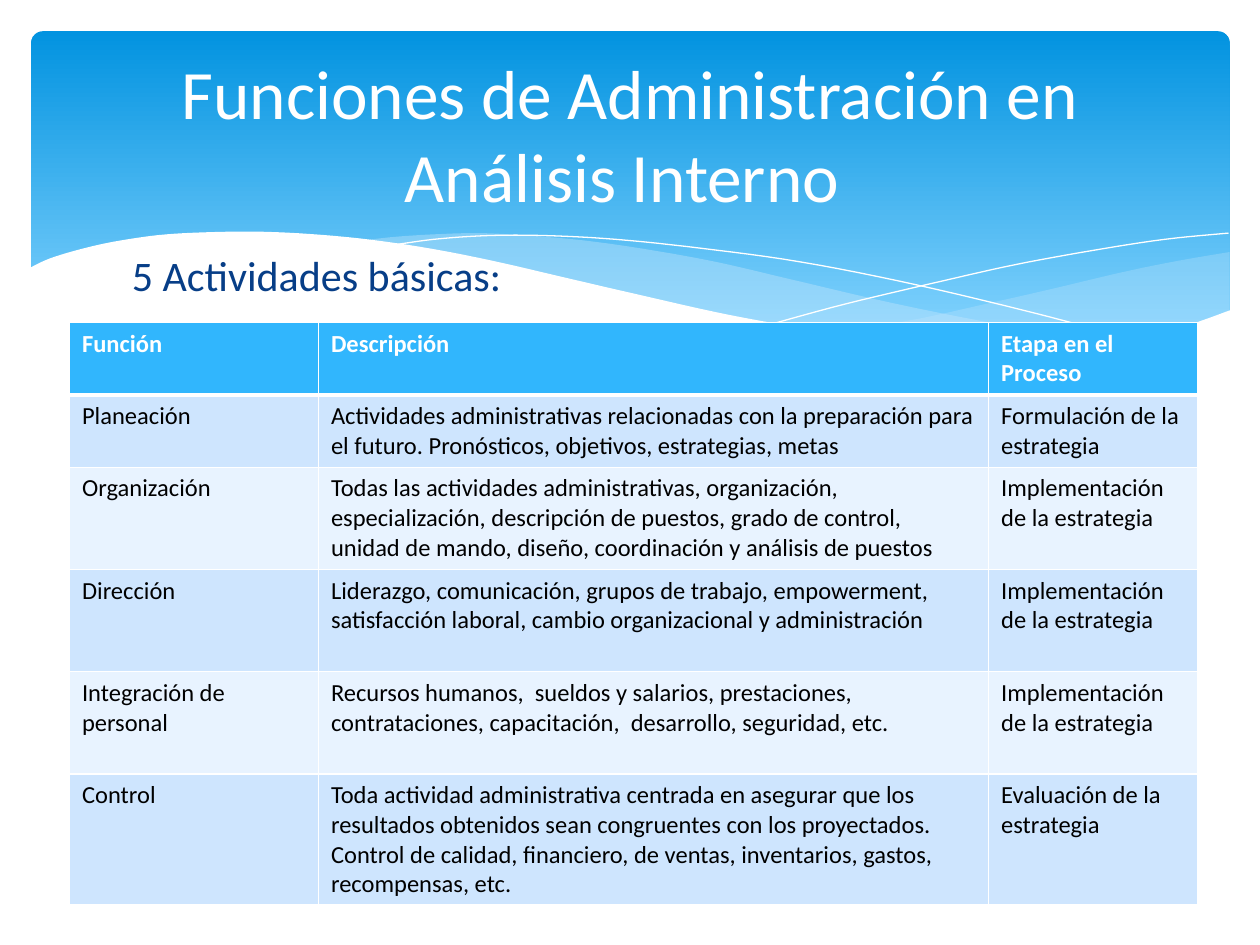
from lxml import etree
from pptx import Presentation
from pptx import util as u
from pptx.dml.color import RGBColor
from pptx.enum import shapes, text
from pptx.oxml.ns import qn

WHITE = RGBColor(0xFF, 0xFF, 0xFF)
BLACK = RGBColor(0x00, 0x00, 0x00)
NAVY = RGBColor(0x07, 0x3E, 0x87)
SKY_TOP = RGBColor(0x02, 0x93, 0xE0)
SKY_LOW = RGBColor(0x83, 0xD3, 0xFE)
MIST = RGBColor(0xC6, 0xE7, 0xFC)
HEADER = RGBColor(0x31, 0xB6, 0xFD)
BANDS = [RGBColor(0xCE, 0xE5, 0xFE), RGBColor(0xE8, 0xF3, 0xFF)]
STEPS = 6


def smooth(pts):
    ext = [pts[0]] + pts + [pts[-1]]
    out = [pts[0]]
    for a, b, c, d in zip(ext, ext[1:], ext[2:], ext[3:]):
        for i in range(1, STEPS + 1):
            t = i / STEPS
            out.append(tuple(
                b[k] + (c[k] - a[k]) * t / 2
                + (2 * a[k] - 5 * b[k] + 4 * c[k] - d[k]) * t ** 2 / 2
                + (3 * b[k] - a[k] - 3 * c[k] + d[k]) * t ** 3 / 2
                for k in (0, 1)))
    return out


def write(tf, words, color, fmt, align=text.PP_ALIGN.LEFT):
    tf.word_wrap = True
    p = tf.paragraphs[0]
    p.alignment = align
    r = p.add_run()
    r.text = words
    r.font.color.rgb = color
    for name, value in {"name": "Calibri", **fmt}.items():
        setattr(r.font, name, value)


prs = Presentation()
prs.slide_width, prs.slide_height = u.Cm(25.4), u.Cm(19.05)
s = prs.slides.add_slide(prs.slide_layouts[6])

sp = s.shapes.add_shape(shapes.MSO_SHAPE.ROUNDED_RECTANGLE,
                        u.Cm(0.63), u.Cm(0.63), u.Cm(24.16), u.Cm(6.86))
sp.adjustments[0] = 0.034
sp.shadow.inherit = False
sp.line.fill.background()
sp.fill.gradient()
sp.fill.gradient_angle = 270
for stop, pos, color in zip(sp.fill.gradient_stops, (0, 0.9), (SKY_TOP, SKY_LOW)):
    stop.position = pos
    stop.color.rgb = color

waves = [
    ([[(9.76, 2), (9.35, 2.07), (8.91, 2.16), (8.32, 2.3), (7.79, 2.42),
       (7.29, 2.53), (6.61, 2.65)],
      [(6.61, 2.65), (7.05, 2.71), (7.57, 2.76), (8.03, 2.78), (8.54, 2.76),
       (8.97, 2.7), (9.35, 2.62), (9.76, 2.47)]], MIST, 29),
    ([[(8.93, 2.73), (8.37, 2.65), (7.75, 2.54), (7.06, 2.4), (6.29, 2.22),
       (5.69, 2.08), (5.14, 1.98), (4.65, 1.91), (4.2, 1.87), (3.8, 1.85),
       (3.44, 1.86), (3.13, 1.88), (2.86, 1.91)],
      [(2.86, 1.91), (3.42, 1.99), (4.04, 2.11), (4.49, 2.22), (5.3, 2.4),
       (6.01, 2.55), (6.65, 2.66), (7.22, 2.74), (7.73, 2.77), (8.18, 2.78),
       (8.57, 2.77), (8.93, 2.73)]], MIST, 40),
    ([[(3.09, 1.95), (3.44, 1.9), (3.87, 1.87), (4.33, 1.87), (4.89, 1.9),
       (5.56, 1.97), (6.36, 2.08), (7.27, 2.26), (8.31, 2.51), (9.07, 2.72)]],
     None, None),
    ([[(6.13, 2.57), (6.72, 2.41), (7.48, 2.23), (8.06, 2.1), (8.66, 1.99),
       (9.24, 1.9), (9.75, 1.85)]], None, None),
    ([[(9.77, 2.46), (9.4, 2.59), (8.99, 2.69), (8.5, 2.75), (8.09, 2.77),
       (7.61, 2.75), (7.08, 2.7), (6.48, 2.62), (5.79, 2.5), (5.03, 2.33),
       (4.47, 2.2), (3.91, 2.07), (3.4, 1.97), (2.92, 1.9), (2.5, 1.86),
       (2.11, 1.84), (1.77, 1.84), (1.32, 1.86), (0.95, 1.91), (0.67, 1.97),
       (0.4, 2.05), (0.23, 2.13)],
      [(0.23, 3.29), (9.77, 3.29)]], WHITE, 100),
]
for curves, color, alpha in waves:
    pts = [(u.Cm(x * 2.54), u.Cm(y * 2.54))
           for curve in curves for x, y in smooth(curve)]
    fb = s.shapes.build_freeform(*pts[0])
    fb.add_line_segments(pts[1:], close=color is not None)
    sp = fb.convert_to_shape()
    sp.shadow.inherit = False
    if color is None:
        sp.fill.background()
        sp.line.color.rgb = WHITE
        sp.line.width = 0
        continue
    sp.line.fill.background()
    sp.fill.solid()
    sp.fill.fore_color.rgb = color
    if alpha < 100:
        clr = sp.element.spPr.find(qn("a:solidFill"))[0]
        etree.SubElement(clr, qn("a:alpha"), val=str(alpha * 1000))

sp = s.shapes.add_textbox(u.Cm(2.41), u.Cm(4.9), u.Cm(20.57), u.Cm(1.4))
write(sp.text_frame, "5 Actividades básicas:", NAVY, {"size": u.Pt(24)})

sp = s.shapes.add_textbox(u.Cm(1.27), u.Cm(0.94), u.Cm(22.86), u.Cm(3.48))
sp.text_frame.vertical_anchor = text.MSO_ANCHOR.MIDDLE
write(sp.text_frame, "Funciones de Administración en Análisis Interno ", WHITE,
      {"size": u.Pt(39.6)}, text.PP_ALIGN.CENTER)

rows = [
    ("Función", "Descripción", "Etapa en el Proceso"),
    ("Planeación",
     "Actividades administrativas relacionadas con la preparación para el futuro. "
     "Pronósticos, objetivos, estrategias, metas",
     "Formulación de la estrategia"),
    ("Organización",
     "Todas las actividades administrativas, organización, especialización, "
     "descripción de puestos, grado de control, unidad de mando, diseño, "
     "coordinación y análisis de puestos",
     "Implementación de la estrategia"),
    ("Dirección",
     "Liderazgo, comunicación, grupos de trabajo, empowerment, satisfacción "
     "laboral, cambio organizacional y administración",
     "Implementación de la estrategia"),
    ("Integración de personal",
     "Recursos humanos,  sueldos y salarios, prestaciones, contrataciones, "
     "capacitación,  desarrollo, seguridad, etc.",
     "Implementación de la estrategia"),
    ("Control",
     "Toda actividad administrativa centrada en asegurar que los resultados "
     "obtenidos sean congruentes con los proyectados. Control de calidad, "
     "financiero, de ventas, inventarios, gastos, recompensas, etc.",
     "Evaluación de la estrategia"),
]
widths = [5.02, 13.51, 4.21]
heights = [1.46, 1.46, 2.06, 2.06, 2.06, 2.64]
tbl = s.shapes.add_table(len(rows), len(widths), u.Cm(1.4), u.Cm(6.5),
                         u.Cm(sum(widths)), u.Cm(sum(heights))).table
for col, w in zip(tbl.columns, widths):
    col.width = u.Cm(w)
for i, (row, h) in enumerate(zip(rows, heights)):
    tbl.rows[i].height = u.Cm(h)
    head = i == 0
    for j, words in enumerate(row):
        cell = tbl.cell(i, j)
        pr = cell._tc.get_or_add_tcPr()
        for side in "LRTB":
            thick = (head and side == "B") or (i == 1 and side == "T")
            ln = etree.SubElement(pr, qn("a:ln" + side), w=str(u.Pt(3 if thick else 1)))
            fill = etree.SubElement(ln, qn("a:solidFill"))
            etree.SubElement(fill, qn("a:srgbClr"), val=str(WHITE))
        cell.fill.solid()
        cell.fill.fore_color.rgb = HEADER if head else BANDS[(i - 1) % 2]
        write(cell.text_frame, words, WHITE if head else BLACK,
              {"size": u.Pt(14), "bold": head})

prs.save("out.pptx")
